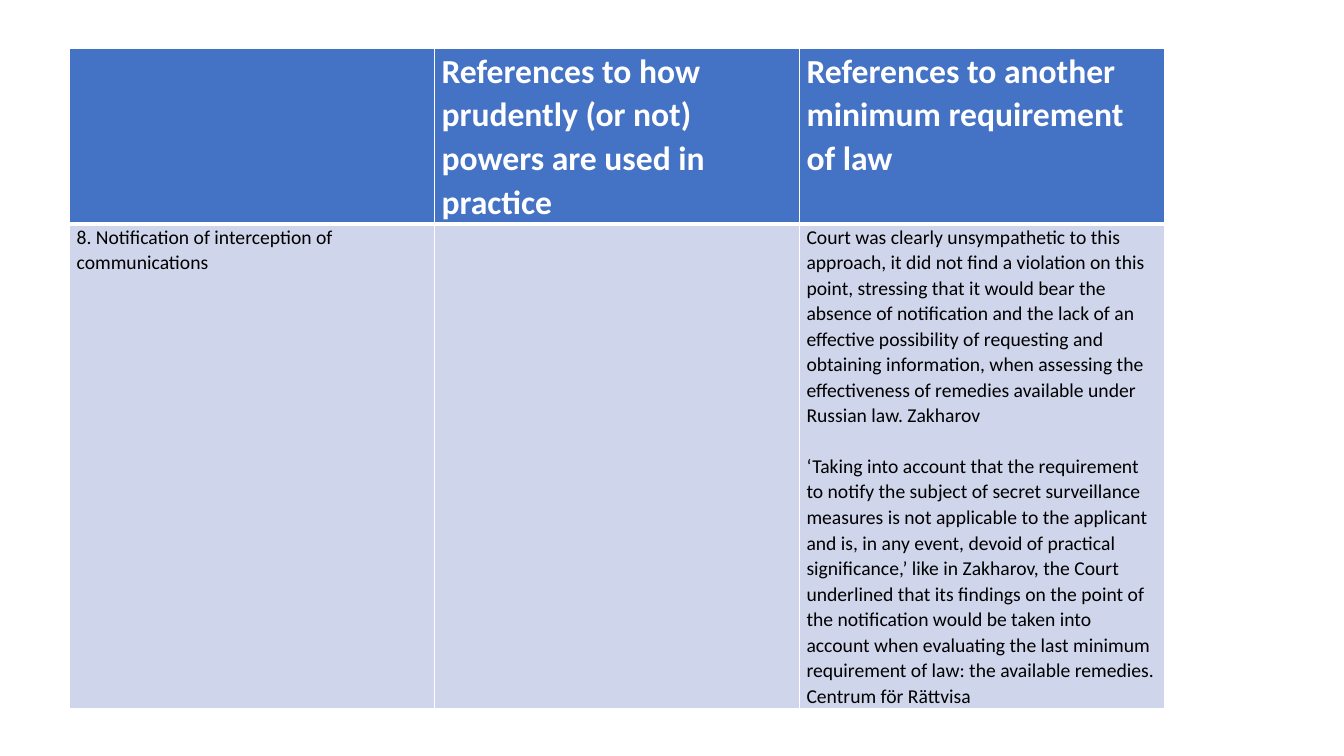
from dataclasses import dataclass
from typing import Any

from lxml import etree
from pptx import Presentation
from pptx import util as u
from pptx.dml.color import RGBColor
from pptx.oxml import ns

PX = 9144
WHITE = RGBColor(0xFF, 0xFF, 0xFF)
BLACK = RGBColor(0x00, 0x00, 0x00)
BLUE = RGBColor(0x44, 0x72, 0xC4)
PALE_BLUE = RGBColor(0xCF, 0xD5, 0xEA)

COLUMN_WIDTH = 362
TABLE_LEFT, TABLE_TOP = 69, 48
PARAGRAPH_GAP = u.Pt(18)


@dataclass(frozen=True)
class Paragraph:
    content: str
    gap_before: bool = False


@dataclass(frozen=True)
class RowStyle:
    height: int
    fill: RGBColor
    borders: dict[str, int]
    font: dict[str, Any]
    color: RGBColor


@dataclass(frozen=True)
class Row:
    style: RowStyle
    cells: list[list[Paragraph]]


HEADER = RowStyle(
    173, BLUE, {"lnL": 1, "lnR": 1, "lnT": 1, "lnB": 3},
    {"name": "Calibri", "size": u.Pt(24), "bold": True}, WHITE,
)
BODY = RowStyle(
    481, PALE_BLUE, {"lnL": 1, "lnR": 1, "lnT": 3, "lnB": 1},
    {"name": "Calibri", "size": u.Pt(14), "bold": False}, BLACK,
)
CELL_FORMAT = {
    "margin_left": 7 * PX,
    "margin_right": 7 * PX,
    "margin_top": 0,
    "margin_bottom": 0,
}

ROWS = [
    Row(HEADER, [
        [],
        [Paragraph("References to how prudently (or not) powers are used in practice")],
        [Paragraph("References to another minimum requirement of law")],
    ]),
    Row(BODY, [
        [Paragraph("8. Notification of interception of communications")],
        [],
        [
            Paragraph(
                "Court was clearly unsympathetic to this approach, it did not find "
                "a violation on this point, stressing that it would bear the absence "
                "of notification and the lack of an effective possibility of "
                "requesting and obtaining information, when assessing the "
                "effectiveness of remedies available under Russian law. Zakharov"
            ),
            Paragraph(
                "‘Taking into account that the requirement to notify the subject of "
                "secret surveillance measures is not applicable to the applicant and "
                "is, in any event, devoid of practical significance,’ like in "
                "Zakharov, the Court underlined that its findings on the point of "
                "the notification would be taken into account when evaluating the "
                "last minimum requirement of law: the available remedies.",
                gap_before=True,
            ),
            Paragraph("Centrum för Rättvisa"),
        ],
    ]),
]


def apply_format(target: Any, values: dict[str, Any]) -> None:
    for name, value in values.items():
        setattr(target, name, value)


def add_borders(cell: Any, borders: dict[str, int]) -> None:
    properties = cell._tc.get_or_add_tcPr()
    for side, points in borders.items():
        line = etree.SubElement(properties, ns.qn(f"a:{side}"), w=str(u.Pt(points)))
        fill = etree.SubElement(line, ns.qn("a:solidFill"))
        etree.SubElement(fill, ns.qn("a:srgbClr"), val=str(WHITE))


def fill_cell(cell: Any, style: RowStyle, paragraphs: list[Paragraph]) -> None:
    add_borders(cell, style.borders)
    cell.fill.solid()
    cell.fill.fore_color.rgb = style.fill
    apply_format(cell, CELL_FORMAT)
    frame = cell.text_frame
    for index, paragraph in enumerate(paragraphs):
        para = frame.add_paragraph() if index else frame.paragraphs[0]
        para.line_spacing = 1.07
        if paragraph.gap_before:
            para.space_before = PARAGRAPH_GAP
        span = para.add_run()
        span.text = paragraph.content
        apply_format(span.font, style.font)
        span.font.color.rgb = style.color


def add_requirements_table(page: Any, rows: list[Row]) -> None:
    column_count = len(rows[0].cells)
    table = page.shapes.add_table(
        len(rows), column_count, TABLE_LEFT * PX, TABLE_TOP * PX,
        column_count * COLUMN_WIDTH * PX, sum(row.style.height for row in rows) * PX,
    ).table
    for column in table.columns:
        column.width = COLUMN_WIDTH * PX
    for row_index, row in enumerate(rows):
        table.rows[row_index].height = row.style.height * PX
        for column_index, paragraphs in enumerate(row.cells):
            fill_cell(table.cell(row_index, column_index), row.style, paragraphs)


def main() -> None:
    deck = Presentation()
    apply_format(deck, {"slide_width": 1333 * PX, "slide_height": 750 * PX})
    page = deck.slides.add_slide(deck.slide_layouts[6])
    add_requirements_table(page, ROWS)
    deck.save("out.pptx")


if __name__ == "__main__":
    main()
